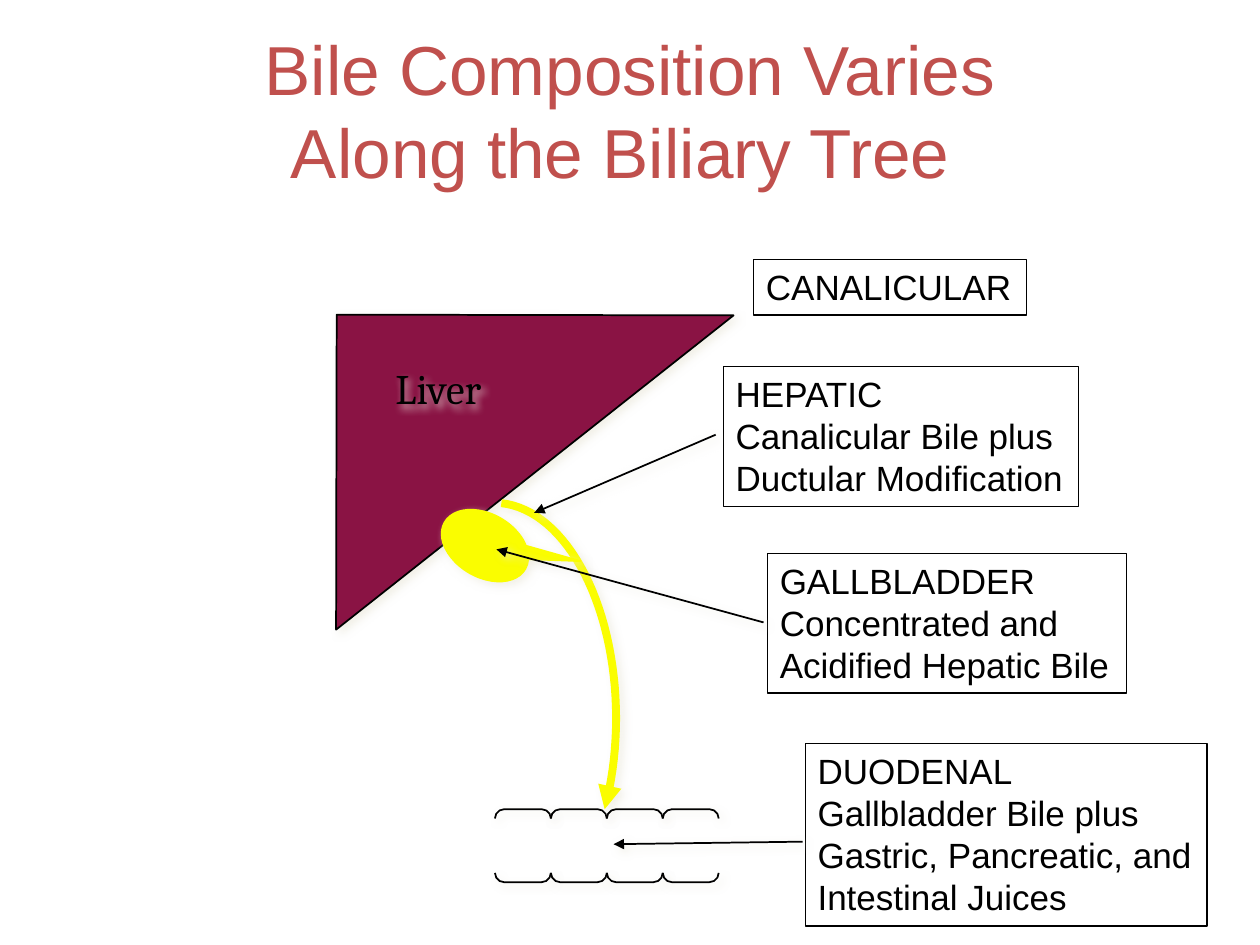
from dataclasses import dataclass
from math import cos, radians, sin

from lxml.etree import SubElement
from pptx import Presentation
from pptx.dml.color import RGBColor as RGB
from pptx.enum.shapes import MSO_CONNECTOR as LINK, MSO_SHAPE as SHAPE
from pptx.enum.text import MSO_ANCHOR as ANCHOR, PP_ALIGN as ALIGN
from pptx.oxml import parse_xml
from pptx.oxml.ns import nsdecls, qn
from pptx.util import Inches, Pt


@dataclass(frozen=True)
class Theme:
    ink: RGB = RGB(0, 0, 0)
    heading: RGB = RGB(0xC0, 0x50, 0x4D)
    liver: RGB = RGB(0x8A, 0x13, 0x44)
    bile: RGB = RGB(0xFA, 0xFD, 0x00)
    shadow: str = "EEECE1"
    sans: str = "Arial"
    serif: str = "Cambria"
    title_size: float = 39.6
    organ_size: float = 24
    label_size: float = 20


theme = Theme()
deck = Presentation()
deck.slide_width, deck.slide_height = Inches(10), Inches(7.5)
slide = deck.slides.add_slide(deck.slide_layouts[6])
shapes = slide.shapes
col, row = deck.slide_width / 100, deck.slide_height / 75


def finish(part, width=None, color=theme.ink, arrow=False):
    props = part._element.spPr
    if width:
        part.line.color.rgb = color
        part.line.width = Pt(width)
    if arrow:
        SubElement(part.line._get_or_add_ln(), qn("a:tailEnd"), type="triangle")
    for old in props.findall(qn("a:effectLst")):
        props.remove(old)
    props.append(parse_xml(
        f'<a:effectLst {nsdecls("a")}><a:outerShdw blurRad="{Pt(5)}" dist="{Pt(3)}" '
        f'dir="2700000" rotWithShape="0"><a:srgbClr val="{theme.shadow}">'
        '<a:alpha val="75000"/></a:srgbClr></a:outerShdw></a:effectLst>'))


def write(left, top, width, height, lines, size, color=theme.ink, font=theme.sans, wrap=False):
    box = shapes.add_textbox(*(round(n) for n in (left * col, top * row, width * col, height * row)))
    box.text_frame.word_wrap = wrap
    box.text_frame.text = "\n".join(lines)
    for paragraph in box.text_frame.paragraphs:
        paragraph.font.size = Pt(size)
        paragraph.font.name = font
        paragraph.font.color.rgb = color
    return box


liver = shapes.add_shape(SHAPE.RIGHT_TRIANGLE, round(26.7 * col), round(25 * row),
                         round(31.5 * col), round(25 * row))
liver._element.spPr.xfrm.set("flipH", "1")
liver.rotation = 180.1
liver.fill.solid()
liver.fill.fore_color.rgb = theme.liver
finish(liver, 1)

duct_points = [
    (round((39.2 + 9.7 * cos(radians(angle))) * col), round((57 + 17.1 * sin(radians(angle))) * row))
    for angle in (-86.5 + 111.5 * step / 40 for step in range(41))
]
duct_builder = shapes.build_freeform(*duct_points[0])
duct_builder.add_line_segments(duct_points[1:], close=False)
duct = duct_builder.convert_to_shape()
duct.fill.background()
finish(duct, 4.5, theme.bile, arrow=True)

gallbladder = shapes.add_shape(SHAPE.OVAL_CALLOUT, round(36 * col), round(39.6 * row),
                               round(5 * col), round(7.4 * row))
gallbladder.adjustments[0], gallbladder.adjustments[1] = 0.547, 0.969
gallbladder.rotation = 300.1
gallbladder.fill.solid()
gallbladder.fill.fore_color.rgb = theme.bile
finish(gallbladder, 1, theme.bile)

finish(write(30.4, 28.3, 9.3, 5.1, ["Liver"], theme.organ_size, font=theme.serif))

duodenum = shapes.add_group_shape()
for index in range(4):
    segment = duodenum.shapes.add_shape(
        SHAPE.DOUBLE_BRACKET, round((38.6 + 4.44 * index) * col), round(64.9 * row),
        round(5.8 * col), round(4.44 * row))
    segment.adjustments[0] = 0.167
    segment.rotation = 90
    segment.fill.background()
    finish(segment, 1)

title = write(4.8, 2.5, 90.4, 12.4, ["Bile Composition Varies\vAlong the Biliary Tree "],
              theme.title_size, theme.heading, wrap=True)
title.text_frame.vertical_anchor = ANCHOR.MIDDLE
title.text_frame.paragraphs[0].alignment = ALIGN.CENTER

bile_stages = [
    (59.8, 20.6, 21.7, 4.4, ["CANALICULAR"]),
    (57.4, 29.1, 28.2, 11.1, ["HEPATIC", "Canalicular Bile plus", "Ductular Modification"]),
    (60.9, 43.9, 28.5, 11.1, ["GALLBLADDER", "Concentrated and", "Acidified Hepatic Bile"]),
    (63.9, 59, 31.9, 14.5, ["DUODENAL", "Gallbladder Bile plus", "Gastric, Pancreatic, and",
                            "Intestinal Juices"]),
]
for *area, lines in bile_stages:
    label = write(*area, lines, theme.label_size)
    label.line.color.rgb = theme.ink
    label.line.width = Pt(0.75)

for x1, y1, x2, y2 in [(56.8, 34.5, 42.4, 40.7), (60.6, 49.4, 39.4, 43.6), (63.7, 66.8, 48.7, 67)]:
    pointer = shapes.add_connector(LINK.STRAIGHT, round(x1 * col), round(y1 * row),
                                   round(x2 * col), round(y2 * row))
    finish(pointer, 1, arrow=True)

deck.save("out.pptx")
